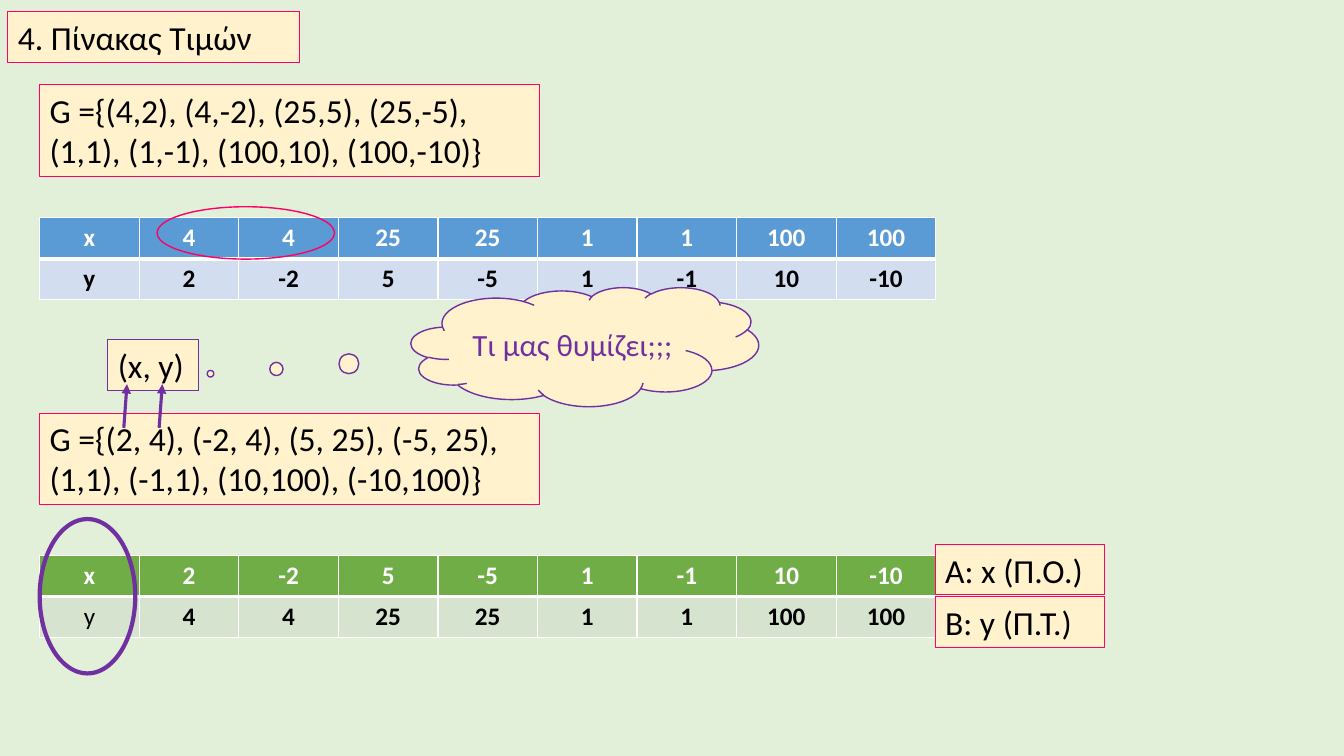
from dataclasses import dataclass

from lxml import etree
from pptx import Presentation
from pptx.dml.color import RGBColor
from pptx.enum.shapes import MSO_CONNECTOR, MSO_SHAPE
from pptx.enum.text import MSO_ANCHOR, MSO_AUTO_SIZE, PP_ALIGN
from pptx.oxml.ns import qn
from pptx.util import Cm, Pt

RECTANGLE = MSO_SHAPE.RECTANGLE
OVAL = MSO_SHAPE.OVAL
CLOUD = MSO_SHAPE.CLOUD_CALLOUT
STRAIGHT = MSO_CONNECTOR.STRAIGHT
LEFT, CENTER = PP_ALIGN.LEFT, PP_ALIGN.CENTER
TOP, MIDDLE = MSO_ANCHOR.TOP, MSO_ANCHOR.MIDDLE
GROW = MSO_AUTO_SIZE.SHAPE_TO_FIT_TEXT


@dataclass(frozen=True)
class Theme:
    font: str = "Calibri"
    background: str = "E2F0D9"
    cream: str = "FFF2CC"
    pink: str = "FF0066"
    purple: str = "7030A0"
    black: str = "000000"
    white: str = "FFFFFF"
    blue: str = "5B9BD5"
    pale_blue: str = "D2DEEF"
    green: str = "70AD47"
    pale_green: str = "D5E3CF"
    box_size: int = 24
    cloud_size: int = 22
    table_size: int = 18


THEME = Theme()
MARGIN = 1.0
COLUMN_WIDTH, ROW_HEIGHT = 2.51, 1.03
LINE_HEIGHT, SET_WIDTH, SET_HEIGHT = 1.27, 12.6, 2.31


def rgb(color):
    return RGBColor.from_string(color)


def add_run(paragraph, text, size, color, bold=False):
    run = paragraph.add_run()
    run.text = text
    run.font.name = THEME.font
    run.font.size = Pt(size)
    run.font.bold = bold
    run.font.color.rgb = rgb(color)


def add_figure(slide, kind, left, top, width, height, line, weight, fill=None):
    shape = slide.shapes.add_shape(kind, Cm(left), Cm(top), Cm(width), Cm(height))
    shape.shadow.inherit = False
    shape.line.color.rgb = rgb(line)
    shape.line.width = Pt(weight)
    if fill:
        shape.fill.solid()
        shape.fill.fore_color.rgb = rgb(fill)
    else:
        shape.fill.background()
    return shape


def add_box(slide, text, left, top, width, height=LINE_HEIGHT, line=THEME.pink):
    shape = add_figure(slide, RECTANGLE, left, top, width, height, line, 0.75, THEME.cream)
    frame = shape.text_frame
    frame.word_wrap = True
    frame.auto_size = GROW
    frame.vertical_anchor = TOP
    paragraph = frame.paragraphs[0]
    paragraph.alignment = LEFT
    add_run(paragraph, text, THEME.box_size, THEME.black)


def add_cloud(slide, text, left, top, width, height):
    shape = add_figure(slide, CLOUD, left, top, width, height, THEME.purple, 1, THEME.cream)
    shape.adjustments[0], shape.adjustments[1] = -1.077, 0.226
    frame = shape.text_frame
    frame.word_wrap = True
    frame.vertical_anchor = MIDDLE
    paragraph = frame.paragraphs[0]
    paragraph.alignment = CENTER
    add_run(paragraph, text, THEME.cloud_size, THEME.purple)


def set_borders(cell, top, bottom):
    properties = cell._tc.get_or_add_tcPr()
    for side, weight in (("L", 1), ("R", 1), ("T", top), ("B", bottom)):
        border = etree.SubElement(properties, qn(f"a:ln{side}"), w=str(Pt(weight)))
        fill = etree.SubElement(border, qn("a:solidFill"))
        etree.SubElement(fill, qn("a:srgbClr"), val=THEME.white)


def add_value_table(slide, top, rows, header_fill, body_fill, bold_y):
    columns = len(rows[0])
    table = slide.shapes.add_table(
        len(rows), columns, Cm(MARGIN), Cm(top),
        Cm(COLUMN_WIDTH * columns), Cm(ROW_HEIGHT * len(rows))).table
    table.horz_banding = False
    for column in table.columns:
        column.width = Cm(COLUMN_WIDTH)
    for row_index, values in enumerate(rows):
        header = row_index == 0
        table.rows[row_index].height = Cm(ROW_HEIGHT)
        for column_index, value in enumerate(values):
            cell = table.cell(row_index, column_index)
            set_borders(cell, *((1, 3) if header else (3, 1)))
            cell.fill.solid()
            cell.fill.fore_color.rgb = rgb(header_fill if header else body_fill)
            paragraph = cell.text_frame.paragraphs[0]
            paragraph.alignment = CENTER
            add_run(paragraph, str(value), THEME.table_size,
                    THEME.white if header else THEME.black,
                    bold_y or value != "y")


def add_arrow(slide, start_x, start_y, end_x, end_y):
    arrow = slide.shapes.add_connector(
        STRAIGHT, Cm(start_x), Cm(start_y), Cm(end_x), Cm(end_y))
    arrow.line.color.rgb = rgb(THEME.purple)
    arrow.line.width = Pt(2.25)
    etree.SubElement(arrow.line._get_or_add_ln(), qn("a:tailEnd"), type="triangle")
    etree.SubElement(arrow._element.spPr, qn("a:effectLst"))


def main():
    presentation = Presentation()
    presentation.slide_width, presentation.slide_height = Cm(33.87), Cm(19.05)
    slide = presentation.slides.add_slide(presentation.slide_layouts[6])
    slide.background.fill.solid()
    slide.background.fill.fore_color.rgb = rgb(THEME.background)

    # Title and the two sets of pairs
    add_box(slide, "(x, y)", 2.72, 8.56, 2.29, line=THEME.purple)
    add_box(slide, "G ={(4,2), (4,-2), (25,5), (25,-5), (1,1), (1,-1), (100,10), (100,-10)}",
            MARGIN, 2.13, SET_WIDTH, SET_HEIGHT)
    add_box(slide, "4. Πίνακας Τιμών", 0.2, 0.3, 7.34)
    add_box(slide, "G ={(2, 4), (-2, 4), (5, 25), (-5, 25), (1,1), (-1,1), (10,100), (-10,100)}",
            MARGIN, 10.41, SET_WIDTH, SET_HEIGHT)

    # Value tables, the second with x and y swapped, each with its ring
    squares = [4, 4, 25, 25, 1, 1, 100, 100]
    roots = [2, -2, 5, -5, 1, -1, 10, -10]
    add_value_table(slide, 5.49, [["x", *squares], ["y", *roots]],
                    THEME.blue, THEME.pale_blue, bold_y=True)
    add_figure(slide, OVAL, 3.96, 5.21, 4.47, 1.32, THEME.pink, 1)
    add_value_table(slide, 14.0, [["x", *roots], ["y", *squares]],
                    THEME.green, THEME.pale_green, bold_y=False)
    add_figure(slide, OVAL, MARGIN, 13.08, 2.41, 3.89, THEME.purple, 3)

    # Domain and range labels
    for text, top in (("A: x (Π.Ο.)", 13.72), ("B: y (Π.Τ.)", 15.04)):
        add_box(slide, text, 23.57, top, 4.27)

    # Arrows from the first pair to (x, y)
    for start_x in (3.12, 4.01):
        add_arrow(slide, start_x, 10.78, start_x + 0.08, 9.68)

    # Thought cloud
    add_cloud(slide, "Τι μας θυμίζει;;;", 10.36, 7.24, 8.76, 3.0)

    presentation.save("out.pptx")


if __name__ == "__main__":
    main()
